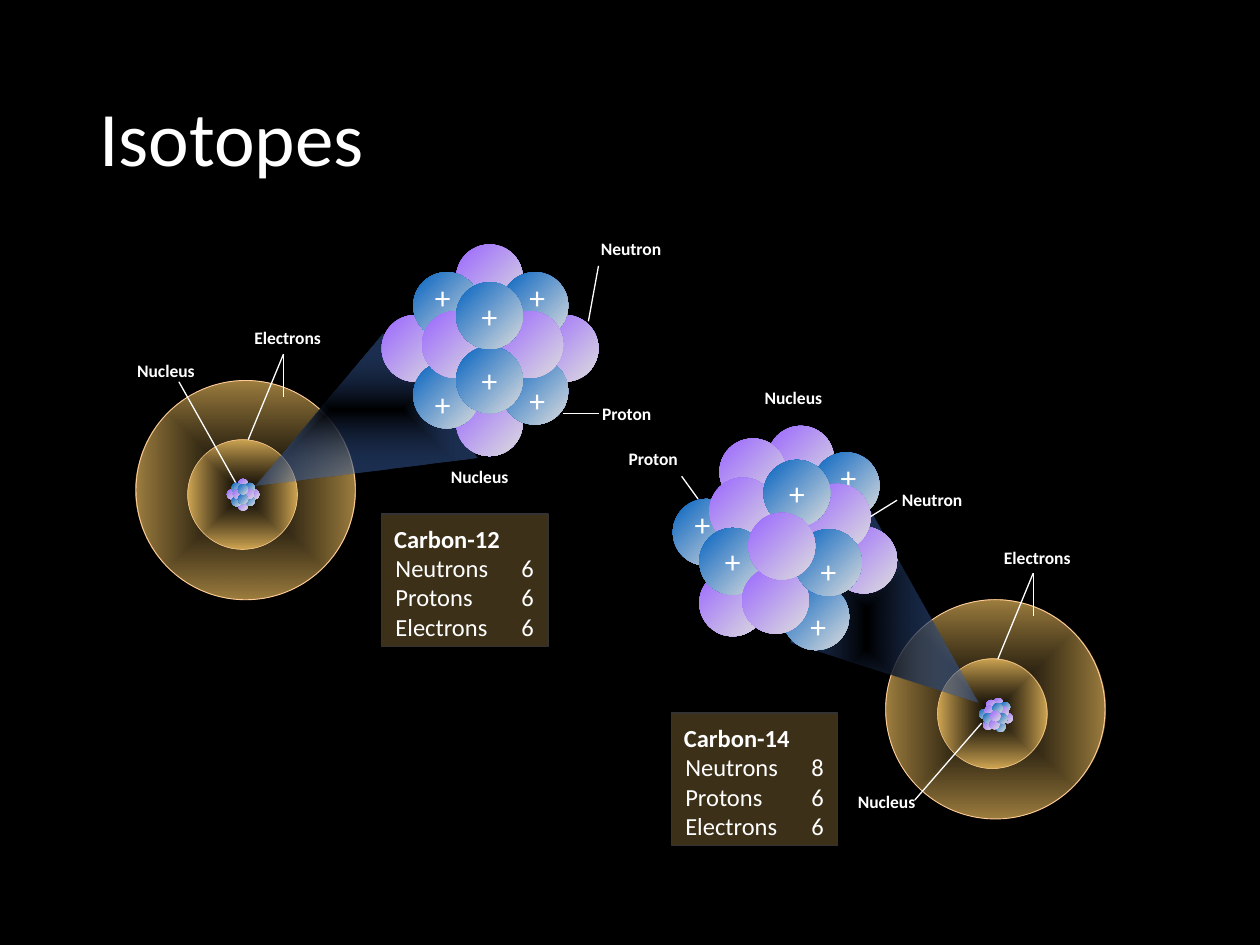
from lxml.etree import SubElement
from pptx import Presentation
from pptx.dml.color import RGBColor
from pptx.enum.shapes import MSO_CONNECTOR, MSO_SHAPE
from pptx.enum.text import MSO_ANCHOR, PP_ALIGN
from pptx.oxml.ns import qn
from pptx.util import Inches, Pt

rgb = RGBColor.from_string


def write(shape, text, size, bold=False, wrap=False, align=PP_ALIGN.LEFT, **frame_format):
    frame = shape.text_frame
    frame.text = text
    for name, value in {"word_wrap": wrap, **frame_format}.items():
        setattr(frame, name, value)
    for paragraph in frame.paragraphs:
        paragraph.alignment = align
        for name, value in {"name": "Calibri", "size": Pt(size), "bold": bold}.items():
            setattr(paragraph.font, name, value)
        paragraph.font.color.rgb = rgb("FFFFFF")


def shade(shape, start, end, path=None):
    shape.shadow.inherit = False
    shape.line.fill.background()
    shape.fill.gradient()
    gradient = shape.element.spPr.find(qn("a:gradFill"))
    gradient.clear()
    gradient.set("rotWithShape", "1")
    stops = SubElement(gradient, qn("a:gsLst"))
    for position, (color, opacity) in ((0, start), (100, end)):
        stop = SubElement(stops, qn("a:gs"), pos=str(position * 1000))
        tint = SubElement(stop, qn("a:srgbClr"), val=color)
        SubElement(tint, qn("a:alpha"), val=str(opacity * 1000))
    if path:
        focus = SubElement(gradient, qn("a:path"), path=path)
        SubElement(focus, qn("a:fillToRect"), l="50000", t="50000", r="50000", b="50000")
    else:
        SubElement(gradient, qn("a:lin"), ang="2700000", scaled="1")


NEUTRON, PROTON = "9966FF", "0563C1"
LEFT_UP, RIGHT_UP = (-0.03, -0.07), (0.02, -0.07)
LEFT_DOWN, RIGHT_DOWN = (-0.03, 0.07), (0.02, 0.07)
MIDDLE, MIDDLE_DOWN = (0, 0), (0, 0.07)

atoms = [
    {
        "name": "Carbon-12", "neutron_count": 6,
        "shell": (1.08, 3.02), "beam": (2.03, 2.65, 0), "card": (3.03, 4.08),
        "nucleus": (3.03, 1.94), "small_nucleus": (1.8, 3.8),
        "nucleons": [
            (3.62, 1.94, None), (3.03, 2.5, None), (3.62, 3.09, None), (4.22, 2.5, None),
            (3.28, 2.16, LEFT_UP), (3.28, 2.87, LEFT_DOWN), (3.35, 2.47, None),
            (3.98, 2.84, RIGHT_DOWN), (3.98, 2.16, RIGHT_UP), (3.94, 2.47, None),
            (3.62, 2.75, MIDDLE), (3.62, 2.24, MIDDLE),
        ],
        "labels": [
            ("Nucleus", 0.99, 2.81), ("Nucleus", 3.48, 3.65),
            ("Neutron", 4.67, 1.84), ("Proton", 4.68, 3.15),
        ],
        "leaders": [
            (1.42, 3.03, 1.87, 3.83), (4.75, 2.11, 4.67, 2.55), (4.75, 3.28, 4.47, 3.28),
        ],
    },
    {
        "name": "Carbon-14", "neutron_count": 8,
        "shell": (7.03, 4.76), "beam": (6, 4.39, 247.7), "card": (5.33, 5.66),
        "nucleus": (5.34, 3.38), "small_nucleus": (7.77, 5.54),
        "nucleons": [
            (6.09, 3.38, None), (5.71, 3.48, None), (5.55, 4.52, None), (6.59, 4.18, None),
            (5.34, 3.96, LEFT_UP), (5.63, 3.79, None), (6.21, 4.63, RIGHT_DOWN),
            (6.45, 3.59, RIGHT_UP), (6.38, 3.84, None), (5.55, 4.19, MIDDLE),
            (6.06, 3.65, MIDDLE), (5.89, 4.5, None), (6.31, 4.2, MIDDLE_DOWN),
            (5.94, 4.07, None),
        ],
        "labels": [
            ("Nucleus", 6.71, 6.23), ("Nucleus", 5.97, 3.02),
            ("Neutron", 7.06, 3.83), ("Proton", 4.89, 3.51),
        ],
        "leaders": [
            (5.41, 3.78, 5.54, 3.96), (7.12, 3.97, 6.91, 4.1), (7.26, 6.35, 7.79, 5.74),
        ],
    },
]
label_widths = {"Nucleus": 0.74, "Electrons": 0.83, "Neutron": 0.73, "Proton": 0.65}
shells = [(0, 0, 1.74, 49, 62, 0.5), (0.41, 0.47, 0.87, 48, 75, 0.25)]
electron_leaders = [(1.17, -0.21, 0.89, 0.47), (1.17, -0.21, 1.17, 0.13)]

deck = Presentation()
deck.slide_width, deck.slide_height = Inches(10), Inches(7.5)
slide = deck.slides.add_slide(deck.slide_layouts[6])
slide.background.fill.solid()
slide.background.fill.fore_color.rgb = rgb("000000")
shapes = slide.shapes

title = shapes.add_textbox(Inches(0.69), Inches(0.4), Inches(8.62), Inches(1.45))
write(title, "Isotopes", 44, wrap=True, vertical_anchor=MSO_ANCHOR.MIDDLE)
title.text_frame.paragraphs[0].line_spacing = 0.9

for atom in atoms:
    shell_x, shell_y = atom["shell"]
    for dx, dy, size, inner, outer, width in shells:
        shell = shapes.add_shape(MSO_SHAPE.OVAL, Inches(shell_x + dx), Inches(shell_y + dy),
                                 Inches(size), Inches(size))
        shade(shell, ("000000", inner), ("FFCC66", outer), "shape")
        shell.line.color.rgb = rgb("FFCC99")
        shell.line.width = Pt(width)

    beam_x, beam_y, turn = atom["beam"]
    outline = shapes.build_freeform(Inches(0), Inches(1.2))
    outline.add_line_segments([(Inches(1.01), Inches(0)), (Inches(1.76), Inches(0.98))])
    beam = outline.convert_to_shape(Inches(beam_x), Inches(beam_y))
    beam.rotation = turn
    shade(beam, ("000000", 100), ("4472C4", 39), "rect")

    nucleus_x, nucleus_y = atom["nucleus"]
    small_x, small_y = atom["small_nucleus"]
    for x, y, shift in atom["nucleons"]:
        nucleon = shapes.add_shape(MSO_SHAPE.OVAL, Inches(x), Inches(y),
                                   Inches(0.53), Inches(0.53))
        shade(nucleon, (PROTON if shift else NEUTRON, 100), ("DDDDDD", 100))
        if shift:
            right, down = shift
            write(nucleon, "+", 18, align=PP_ALIGN.CENTER, vertical_anchor=MSO_ANCHOR.MIDDLE,
                  margin_left=Inches(max(0, 2 * right)), margin_right=Inches(max(0, -2 * right)),
                  margin_top=Inches(max(0, 2 * down)), margin_bottom=Inches(max(0, -2 * down)))

    labels = atom["labels"] + [("Electrons", shell_x + 0.84, shell_y - 0.47)]
    for text, x, y in labels:
        label = shapes.add_textbox(Inches(x), Inches(y), Inches(label_widths[text]), Inches(0.27))
        write(label, text, 10, bold=True)

    leaders = atom["leaders"] + [
        (shell_x + x1, shell_y + y1, shell_x + x2, shell_y + y2)
        for x1, y1, x2, y2 in electron_leaders
    ]
    for ends in leaders:
        leader = shapes.add_connector(MSO_CONNECTOR.STRAIGHT, *map(Inches, ends))
        leader.line.color.rgb = rgb("FFFFFF")
        leader.line.width = Pt(0.75)
        SubElement(leader.element.spPr, qn("a:effectLst"))

    card_x, card_y = atom["card"]
    card = shapes.add_shape(MSO_SHAPE.RECTANGLE, Inches(card_x), Inches(card_y),
                            Inches(1.32), Inches(1.05))
    card.shadow.inherit = False
    card.fill.solid()
    card.fill.fore_color.rgb = rgb("FFCC66")
    card_tint = card.element.spPr.find(qn("a:solidFill")).find(qn("a:srgbClr"))
    SubElement(card_tint, qn("a:alpha"), val="24000")
    card.line.color.rgb = rgb("333333")
    card.line.width = Pt(0.75)
    heading = shapes.add_textbox(Inches(card_x), Inches(card_y + 0.03), Inches(1.16), Inches(0.33))
    write(heading, atom["name"], 14, bold=True)
    counts = shapes.add_textbox(Inches(card_x + 0.01), Inches(card_y + 0.26),
                                Inches(1.31), Inches(0.8))
    write(counts, f"Neutrons\t{atom['neutron_count']}\nProtons\t6\nElectrons\t6", 14)

    for x, y, shift in atom["nucleons"]:
        small_nucleon = shapes.add_shape(
            MSO_SHAPE.OVAL, Inches(small_x + (x - nucleus_x) * 0.15),
            Inches(small_y + (y - nucleus_y) * 0.15), Inches(0.08), Inches(0.08))
        shade(small_nucleon, (PROTON if shift else NEUTRON, 100), ("DDDDDD", 100))

deck.save("out.pptx")
